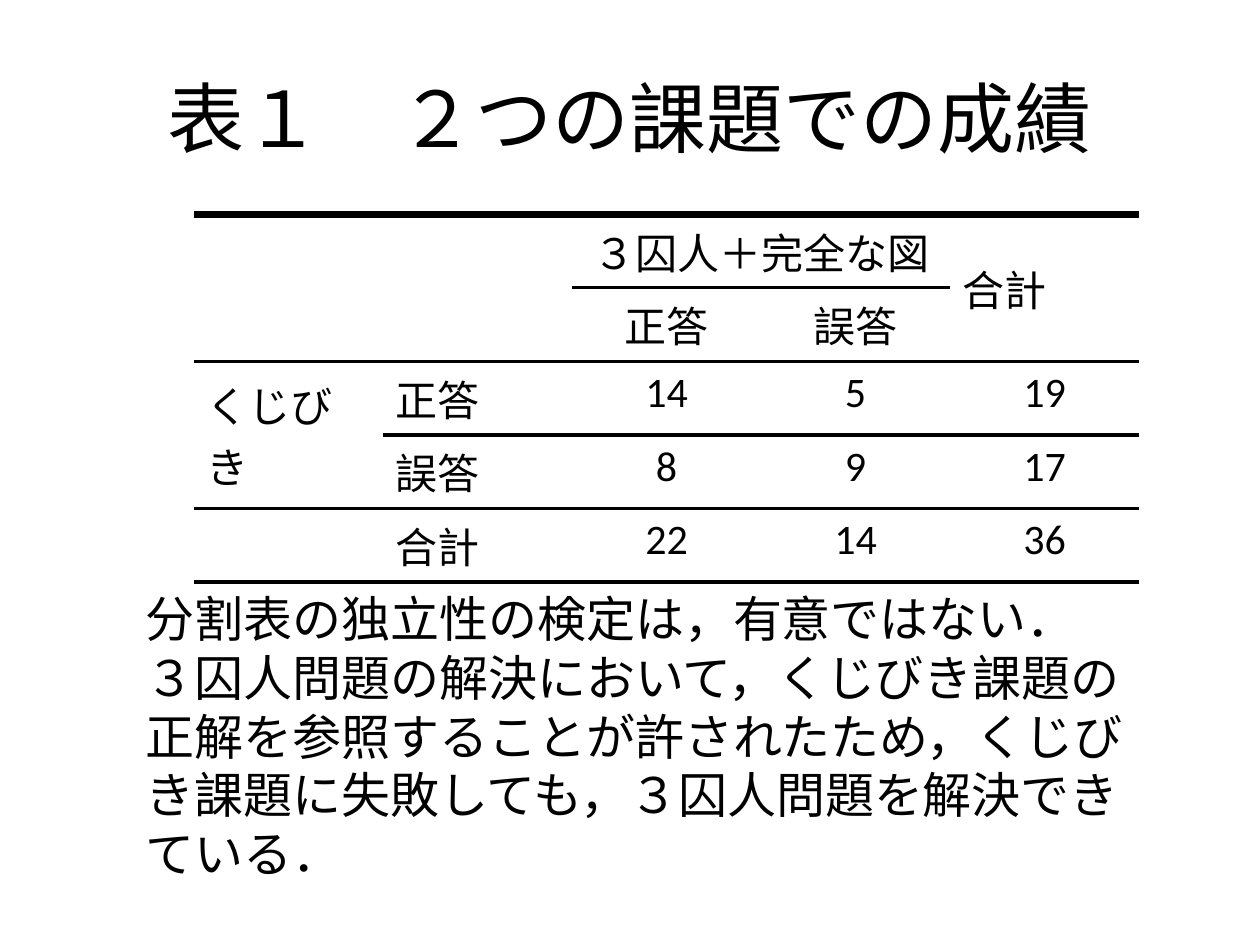
from lxml import etree
from pptx import Presentation
from pptx.dml.color import RGBColor
from pptx.enum.text import MSO_ANCHOR, MSO_AUTO_SIZE, PP_ALIGN
from pptx.oxml.ns import qn
from pptx.util import Inches, Pt

LEFT, CENTER = PP_ALIGN.LEFT, PP_ALIGN.CENTER
TOP, MIDDLE = MSO_ANCHOR.TOP, MSO_ANCHOR.MIDDLE
GROW = MSO_AUTO_SIZE.SHAPE_TO_FIT_TEXT
NO_FIT = MSO_AUTO_SIZE.NONE
BLACK = "000000"

RESULTS = [
    ["", "", "３囚人＋完全な図", "", "合計"],
    ["", "", "正答", "誤答", ""],
    ["くじびき", "正答", "14", "5", "19"],
    ["", "誤答", "8", "9", "17"],
    ["", "合計", "22", "14", "36"],
]
SPANS = [((0, 2), (0, 3)), ((0, 4), (1, 4)), ((2, 0), (3, 0))]
RULES = {
    0: (4.5, range(5)),
    1: (2.25, range(2, 4)),
    2: (2.25, range(5)),
    3: (2.25, range(1, 5)),
    4: (2.25, range(5)),
    5: (3, range(5)),
}
FINDINGS = [
    "分割表の独立性の検定は，有意ではない．",
    "３囚人問題の解決において，くじびき課題の正解を参照することが許されたため，"
    "くじびき課題に失敗しても，３囚人問題を解決できている．",
]


def color(value):
    return RGBColor.from_string(value)


class SlideBuilder:
    def __init__(self, slide, font="Calibri", ink=BLACK):
        self.slide = slide
        self.font = font
        self.ink = ink

    def fill_text(self, frame, lines, size, align):
        for index, line in enumerate(lines):
            paragraph = frame.add_paragraph() if index else frame.paragraphs[0]
            paragraph.alignment = align
            run = paragraph.add_run()
            run.text = line
            for name, value in {"name": self.font, "size": Pt(size)}.items():
                setattr(run.font, name, value)
            run.font.color.rgb = color(self.ink)

    def text(self, box, lines, size, align=LEFT, **frame_format):
        frame = self.slide.shapes.add_textbox(*map(Inches, box)).text_frame
        for name, value in {"word_wrap": True, **frame_format}.items():
            setattr(frame, name, value)
        self.fill_text(frame, lines, size, align)

    def border(self, cell, side, width):
        line = etree.SubElement(cell._tc.get_or_add_tcPr(), qn(f"a:ln{side}"))
        if not width:
            etree.SubElement(line, qn("a:noFill"))
            return
        line.set("w", str(Pt(width)))
        fill = etree.SubElement(line, qn("a:solidFill"))
        etree.SubElement(fill, qn("a:srgbClr")).set("val", self.ink)

    def table(self, box, rows, spans, rules, size):
        grid = self.slide.shapes.add_table(
            len(rows), len(rows[0]), *map(Inches, box)
        ).table
        grid.first_row = grid.horz_banding = False
        for start, end in spans:
            grid.cell(*start).merge(grid.cell(*end))

        def rule_width(edge, column):
            width, columns = rules[edge]
            return width if column in columns else 0

        for row, labels in enumerate(rows):
            for column, label in enumerate(labels):
                cell = grid.cell(row, column)
                height = cell.span_height if cell.is_merge_origin else 1
                borders = {
                    "L": 0,
                    "R": 0,
                    "T": rule_width(row, column),
                    "B": rule_width(row + height, column),
                }
                for side, width in borders.items():
                    self.border(cell, side, width)
                cell.fill.background()
                cell.vertical_anchor = MIDDLE if cell.is_merge_origin else TOP
                if not cell.is_spanned:
                    centered = column > 1 and not (row == 0 and column == 4)
                    align = CENTER if centered else LEFT
                    self.fill_text(cell.text_frame, [label], size, align)


def main():
    deck = Presentation()
    deck.slide_width, deck.slide_height = Inches(10), Inches(7.5)
    builder = SlideBuilder(deck.slides.add_slide(deck.slide_layouts[6]))
    builder.text((0.5, 0.3, 9, 1.25), ["表１　２つの課題での成績"], 44, CENTER,
                 vertical_anchor=MIDDLE, auto_size=NO_FIT)
    builder.table((1.54, 1.7, 7.5, 2.05), RESULTS, SPANS, RULES, 24)
    builder.text((1.06, 4.62, 8.27, 1.99), FINDINGS, 28, auto_size=GROW)
    deck.save("out.pptx")


if __name__ == "__main__":
    main()
